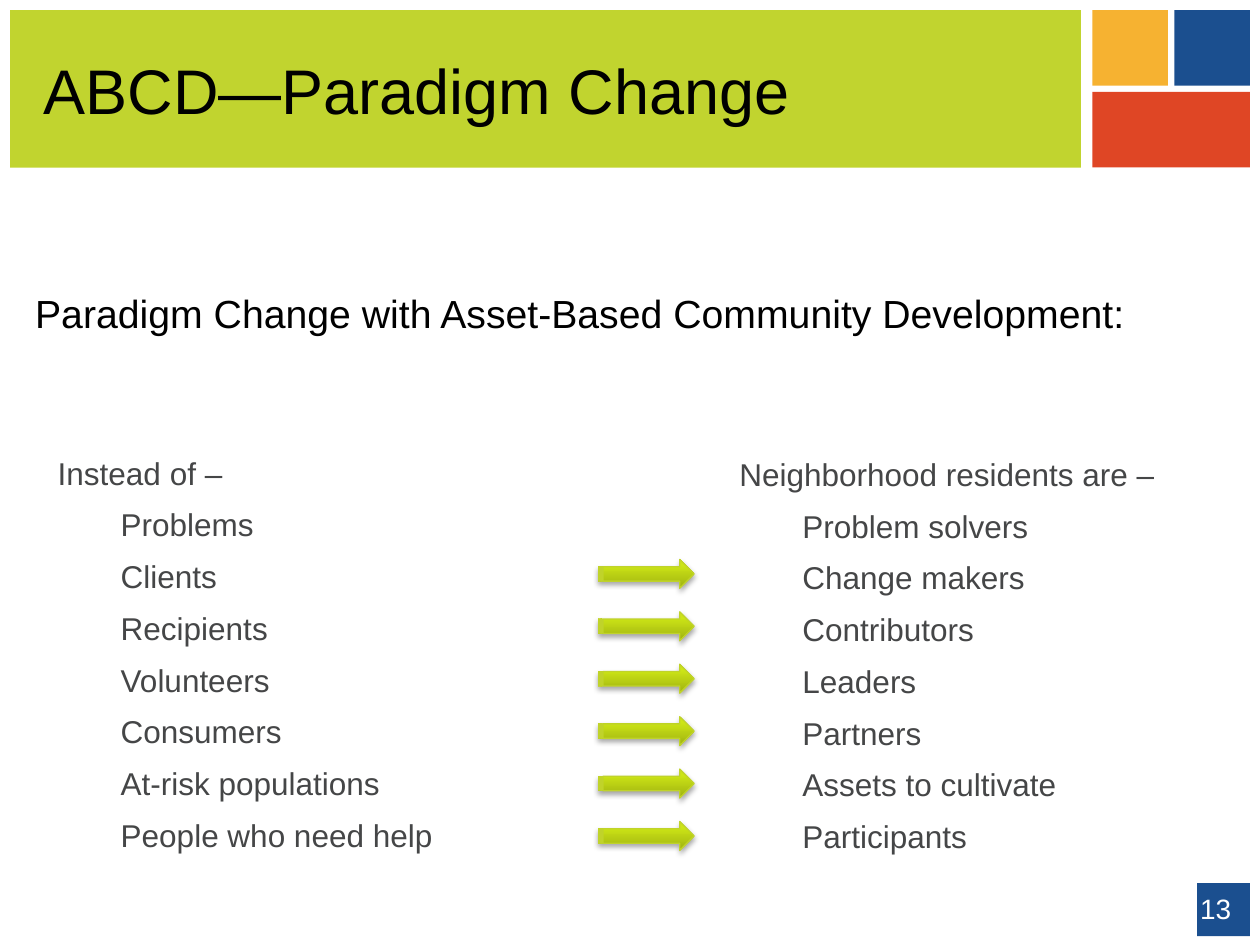
import copy
from dataclasses import dataclass

import pptx
import pptx.dml.color
import pptx.enum.shapes
import pptx.enum.text
import pptx.oxml
import pptx.oxml.ns
import pptx.util
from pptx.util import Inches

COLORS = {
    "lime": "C1D42F", "blue": "1B4F8F", "amber": "F6B231", "red": "DF4625",
    "black": "000000", "white": "FFFFFF", "gray": "454647",
    "arrow_line": "C0D32A", "arrow_dark": "9EB111",
    "arrow_mid": "CDE516", "arrow_light": "D2EA12",
}
ARROW_STOPS = [(0, "arrow_dark"), (0.8, "arrow_mid"), (1, "arrow_light")]
ARROW_COUNT = 6
FIRST_ARROW_TOP, LAST_ARROW_TOP = 4.44, 6.52
SHADOW_XML = (
    f'<a:outerShdw {pptx.oxml.ns.nsdecls("a")} blurRad="40000" dist="23000" '
    'dir="5400000" rotWithShape="0"><a:srgbClr val="000000">'
    '<a:alpha val="35000"/></a:srgbClr></a:outerShdw>'
)
SHAPES = pptx.enum.shapes.MSO_SHAPE
ALIGN = pptx.enum.text.PP_ALIGN
ANCHOR = pptx.enum.text.MSO_ANCHOR


@dataclass
class Box:
    left: float
    top: float
    width: float
    height: float

    def lengths(self) -> list:
        return [Inches(v) for v in (self.left, self.top, self.width, self.height)]


@dataclass
class Block:
    box: Box
    color: str


@dataclass
class Label:
    box: Box
    text: str
    size: float
    color: str
    anchor: ANCHOR = ANCHOR.TOP
    align: ALIGN = ALIGN.LEFT
    before: float = 0
    after: float = 0


@dataclass
class RoleList:
    box: Box
    heading: str
    roles: list[str]


BLOCKS = [
    Block(Box(0.08, 0.08, 8.5, 1.25), "lime"),
    Block(Box(9.5, 7.01, 0.42, 0.42), "blue"),
    Block(Box(8.67, 0.08, 0.6, 0.6), "amber"),
    Block(Box(8.67, 0.73, 1.25, 0.6), "red"),
    Block(Box(9.32, 0.08, 0.6, 0.6), "blue"),
]
LABELS = [
    Label(Box(7.54, 7.01, 2.33, 0.4), "13", 16, "white", ANCHOR.MIDDLE, ALIGN.RIGHT),
    Label(Box(0.25, 0.08, 8.33, 1.25), "ABCD—Paradigm Change", 36, "black",
          ANCHOR.MIDDLE, before=36, after=18),
    Label(Box(0.18, 2.25, 9.65, 0.47),
          "Paradigm Change with Asset-Based Community Development:",
          22.4, "black", before=4.5),
]
ROLE_LISTS = [
    RoleList(Box(0.36, 3.55, 3.79, 3.31), "Instead of –",
             ["Problems", "Clients", "Recipients", "Volunteers", "Consumers",
              "At-risk populations", "People who need help"]),
    RoleList(Box(5.77, 3.56, 3.79, 3.31), "Neighborhood residents are –",
             ["Problem solvers", "Change makers", "Contributors", "Leaders",
              "Partners", "Assets to cultivate", "Participants"]),
]


def rgb(name: str) -> pptx.dml.color.RGBColor:
    return pptx.dml.color.RGBColor.from_string(COLORS[name])


def style_font(paragraph, size: float, color: str) -> None:
    paragraph.font.name = "Arial"
    paragraph.font.size = pptx.util.Pt(size)
    paragraph.font.color.rgb = rgb(color)


def add_text_frame(slide, box: Box):
    frame = slide.shapes.add_textbox(*box.lengths()).text_frame
    frame.word_wrap = True
    return frame


def draw_block(slide, block: Block) -> None:
    rectangle = slide.shapes.add_shape(SHAPES.RECTANGLE, *block.box.lengths())
    rectangle.shadow.inherit = False
    rectangle.fill.solid()
    rectangle.fill.fore_color.rgb = rgb(block.color)
    rectangle.line.fill.background()


def draw_label(slide, label: Label) -> None:
    frame = add_text_frame(slide, label.box)
    frame.vertical_anchor = label.anchor
    paragraph = frame.paragraphs[0]
    paragraph.text = label.text
    paragraph.alignment = label.align
    paragraph.space_before = pptx.util.Pt(label.before)
    paragraph.space_after = pptx.util.Pt(label.after)
    style_font(paragraph, label.size, label.color)


def draw_role_list(slide, role_list: RoleList) -> None:
    frame = add_text_frame(slide, role_list.box)
    frame.auto_size = pptx.enum.text.MSO_AUTO_SIZE.SHAPE_TO_FIT_TEXT
    heading = frame.paragraphs[0]
    heading.text = role_list.heading
    style_font(heading, 18, "gray")
    for role in role_list.roles:
        entry = frame.add_paragraph()
        entry.text = role
        entry.space_before = pptx.util.Pt(8)
        entry._p.get_or_add_pPr().set("marL", str(Inches(0.5)))
        style_font(entry, 18, "gray")


def draw_arrow(slide, box: Box) -> None:
    """Draw a striped arrow with a three-stop gradient and a soft shadow."""
    arrow = slide.shapes.add_shape(SHAPES.STRIPED_RIGHT_ARROW, *box.lengths())
    arrow.fill.gradient()
    arrow.fill.gradient_angle = 90
    properties = arrow._element.spPr
    stop_list = properties.find(".//" + pptx.oxml.ns.qn("a:gsLst"))
    stop_list.append(copy.deepcopy(stop_list[-1]))
    for stop, (position, color) in zip(arrow.fill.gradient_stops, ARROW_STOPS):
        stop.position = position
        stop.color.rgb = rgb(color)
    arrow.line.color.rgb = rgb("arrow_line")
    arrow.line.width = pptx.util.Pt(0.75)
    arrow.shadow.inherit = False
    effects = properties.find(pptx.oxml.ns.qn("a:effectLst"))
    effects.append(pptx.oxml.parse_xml(SHADOW_XML))


def main() -> None:
    deck = pptx.Presentation()
    deck.slide_width, deck.slide_height = Inches(10), Inches(7.5)
    slide = deck.slides.add_slide(deck.slide_layouts[6])
    for block in BLOCKS:
        draw_block(slide, block)
    for label in LABELS:
        draw_label(slide, label)
    for role_list in ROLE_LISTS:
        draw_role_list(slide, role_list)
    arrow_pitch = (LAST_ARROW_TOP - FIRST_ARROW_TOP) / (ARROW_COUNT - 1)
    for row in range(ARROW_COUNT):
        draw_arrow(slide, Box(4.75, FIRST_ARROW_TOP + row * arrow_pitch, 0.76, 0.23))
    deck.save("out.pptx")


if __name__ == "__main__":
    main()
